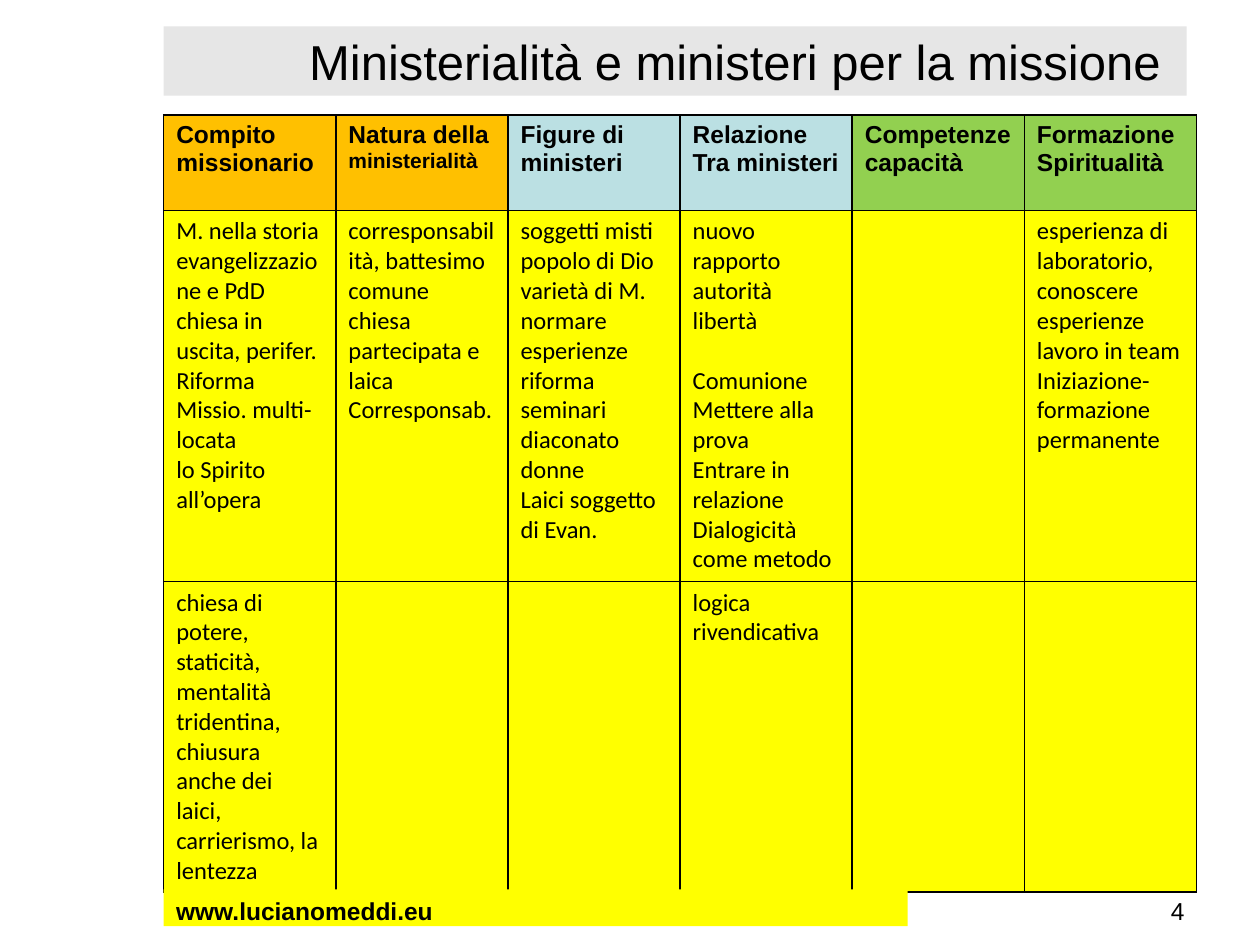
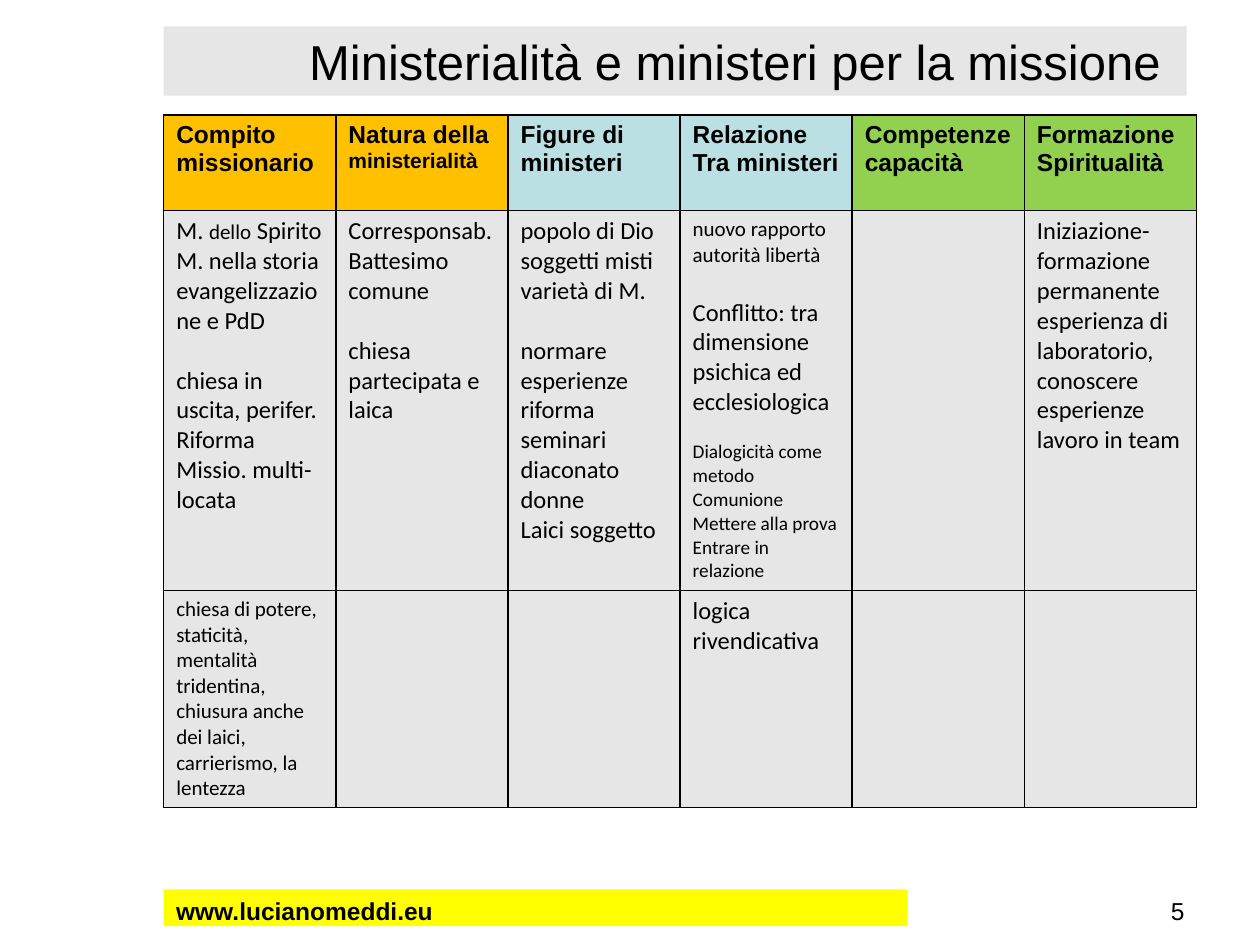
from dataclasses import dataclass

from pptx import Presentation
from pptx.dml.color import RGBColor
from pptx.enum.shapes import MSO_SHAPE as Shape
from pptx.enum.text import MSO_ANCHOR as Anchor, MSO_AUTO_SIZE as AutoSize, PP_ALIGN as Align
from pptx.oxml.ns import qn
from pptx.util import Cm, Pt
from lxml.etree import SubElement

BLACK, GREY, YELLOW = "000000", "E6E6E6", "FFFF00"
ORANGE, BLUE, GREEN = "FFC000", "BBE0E3", "92D050"
HEADING_FONT, BODY_FONT = "Arial", "Calibri"
LEFT = 3.3
COLUMN_WIDTH = 3.47
HEADER_HEIGHT = 1.92
FOOTER_TOP, FOOTER_HEIGHT = 17.93, 0.74
TITLE = "Ministerialità e ministeri per la missione"
WEBSITE = "www.lucianomeddi.eu"


@dataclass
class Line:
    runs: list
    gap: float = 0


def line(text, size=14, gap=0):
    return Line([(text, size)], gap)


def lines(*texts, size=14):
    return [line(text, size) for text in texts]


HEADER = [
    (ORANGE, lines("Compito", "missionario")),
    (ORANGE, [Line([("Natura della ", 14), ("ministerialità", 12)])]),
    (BLUE, lines("Figure di ministeri")),
    (BLUE, lines("Relazione", "Tra ministeri")),
    (GREEN, lines("Competenze", "capacità")),
    (GREEN, lines("Formazione", "Spiritualità")),
]
OBSTACLES = (
    "chiesa di potere, staticità, mentalità tridentina, chiusura anche dei laici, "
    "carrierismo, la lentezza"
)
CLAIMS = lines("logica rivendicativa")

FIRST_ROWS = [
    (7.48, [
        lines("M. nella storia evangelizzazione e PdD", "chiesa in uscita, perifer.",
              "Riforma", "Missio. multi-locata", "lo Spirito all’opera"),
        lines("corresponsabilità, battesimo comune", "chiesa partecipata e laica",
              "Corresponsab."),
        lines("soggetti misti popolo di Dio varietà di M.", "normare esperienze",
              "riforma seminari", "diaconato donne", "Laici soggetto di Evan."),
        [line("nuovo rapporto autorità libertà"),
         line("Comunione", gap=17.1),
         *lines("Mettere alla prova", "Entrare in relazione", "Dialogicità come metodo")],
        [],
        lines("esperienza di laboratorio, conoscere esperienze", "lavoro in team",
              "Iniziazione-formazione permanente"),
    ]),
    (6.25, [lines(OBSTACLES), [], [], CLAIMS, [], []]),
]
SECOND_ROWS = [
    (7.66, [
        [Line([("M. ", 14), ("dello", 12), (" Spirito", 14)]),
         line("M. nella storia evangelizzazione e PdD"),
         line("chiesa in uscita, perifer.", gap=17.1),
         *lines("Riforma", "Missio. multi-locata")],
        [*lines("Corresponsab.", "Battesimo comune"),
         line("chiesa partecipata e laica", gap=17.1)],
        [line("popolo di Dio soggetti misti varietà di M."),
         line("normare esperienze", gap=17.1),
         *lines("riforma seminari", "diaconato donne", "Laici soggetto")],
        [line("nuovo rapporto autorità libertà", 12),
         line("Conflitto: tra dimensione psichica ed ecclesiologica", gap=17.1),
         line("Dialogicità come metodo", 11, gap=13.4),
         *lines("Comunione", "Mettere alla prova", "Entrare in relazione", size=11)],
        [],
        lines("Iniziazione-formazione permanente",
              "esperienza di laboratorio, conoscere esperienze", "lavoro in team"),
    ]),
    (4.37, [lines(OBSTACLES, size=12), [], [], CLAIMS, [], []]),
]


def color(value):
    return RGBColor.from_string(value)


def paint(target, value):
    target.fill.solid()
    target.fill.fore_color.rgb = color(value)


def add_run(paragraph, text, size, font=HEADING_FONT, bold=False):
    run = paragraph.add_run()
    run.text = text
    run.font.name = font
    run.font.size = Pt(size)
    run.font.bold = bold
    run.font.color.rgb = color(BLACK)


def write_lines(frame, content, font, bold):
    for index, item in enumerate(content):
        paragraph = frame.add_paragraph() if index else frame.paragraphs[0]
        if item.gap:
            paragraph.space_before = Pt(item.gap)
        for text, size in item.runs:
            add_run(paragraph, text, size, font, bold)


def add_borders(cell):
    properties = cell._tc.get_or_add_tcPr()
    for side in ("lnL", "lnR", "lnT", "lnB"):
        border = SubElement(properties, qn(f"a:{side}"), w=str(Pt(1)))
        fill = SubElement(border, qn("a:solidFill"))
        SubElement(fill, qn("a:srgbClr"), val=BLACK)


def fill_cell(cell, content, background, font=BODY_FONT, bold=False):
    add_borders(cell)
    paint(cell, background)
    write_lines(cell.text_frame, content, font, bold)


def set_title(slide):
    title = slide.shapes.title
    title.left, title.top = Cm(LEFT), Cm(0.53)
    title.width, title.height = Cm(20.62), Cm(1.4)
    paint(title, GREY)
    frame = title.text_frame
    frame.auto_size = AutoSize.NONE
    frame.vertical_anchor = Anchor.MIDDLE
    frame.margin_right = Cm(0.53)
    paragraph = frame.paragraphs[0]
    paragraph.alignment = Align.RIGHT
    add_run(paragraph, TITLE, 28)


def add_ministry_table(slide, body_rows, background):
    height = HEADER_HEIGHT + sum(row_height for row_height, _ in body_rows)
    table = slide.shapes.add_table(
        len(body_rows) + 1, len(HEADER), Cm(LEFT), Cm(2.32),
        Cm(COLUMN_WIDTH * len(HEADER)), Cm(height)).table
    table.first_row = table.horz_banding = False
    for column in table.columns:
        column.width = Cm(COLUMN_WIDTH)
    table.rows[0].height = Cm(HEADER_HEIGHT)
    for index, (fill, content) in enumerate(HEADER):
        fill_cell(table.cell(0, index), content, fill, HEADING_FONT, True)
    for row_index, (row_height, cells) in enumerate(body_rows, 1):
        table.rows[row_index].height = Cm(row_height)
        for column_index, content in enumerate(cells):
            fill_cell(table.cell(row_index, column_index), content, background)


def add_footer(slide, number):
    band = slide.shapes.add_shape(
        Shape.RECTANGLE, Cm(LEFT), Cm(FOOTER_TOP), Cm(15), Cm(FOOTER_HEIGHT))
    band.shadow.inherit = False
    paint(band, YELLOW)
    band.line.fill.background()
    number_box = slide.shapes.add_textbox(
        Cm(20.7), Cm(FOOTER_TOP), Cm(3.43), Cm(FOOTER_HEIGHT))
    for shape, text, alignment, bold in (
            (band, WEBSITE, Align.LEFT, True),
            (number_box, str(number), Align.RIGHT, False)):
        frame = shape.text_frame
        frame.word_wrap = True
        frame.vertical_anchor = Anchor.TOP
        paragraph = frame.paragraphs[0]
        paragraph.alignment = alignment
        add_run(paragraph, text, 14, bold=bold)


def main():
    presentation = Presentation()
    presentation.slide_width, presentation.slide_height = Cm(25.4), Cm(19.05)
    title_only = presentation.slide_layouts[5]
    slides = [(FIRST_ROWS, YELLOW), (SECOND_ROWS, GREY)]
    for number, (body_rows, background) in enumerate(slides, 4):
        slide = presentation.slides.add_slide(title_only)
        set_title(slide)
        add_ministry_table(slide, body_rows, background)
        add_footer(slide, number)
    presentation.save("out.pptx")


if __name__ == "__main__":
    main()
